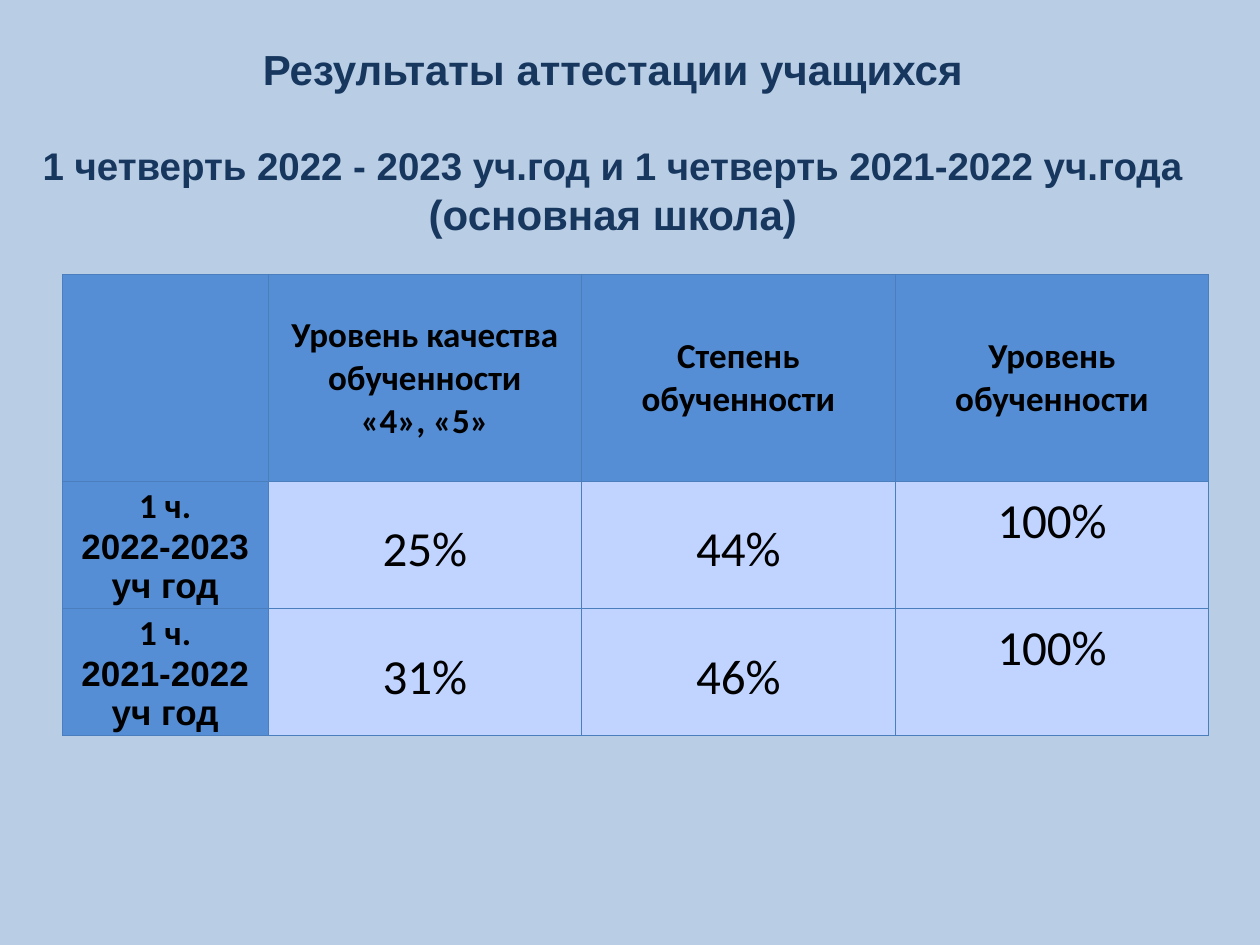
from dataclasses import dataclass

from lxml.etree import SubElement
from pptx import Presentation
from pptx.dml.color import RGBColor as Rgb
from pptx.enum.text import MSO_ANCHOR as Anchor, MSO_AUTO_SIZE as AutoSize, PP_ALIGN as Align
from pptx.oxml.ns import qn
from pptx.util import Pt

COLORS = {
    "background": "B9CDE5",
    "title": "17375E",
    "heading": "558ED5",
    "value": "C0D4FF",
    "border": "4B7EBC",
    "text": "000000",
}


@dataclass
class Line:
    text: str
    size: float
    font: str = "Arial"
    bold: bool = True
    color: str = "text"
    spacing: float = 1.0
    space_after: float = 0


@dataclass
class Period:
    years: str
    quality: str
    degree: str
    level: str


TITLE = [
    Line("Результаты аттестации учащихся", 24, color="title", space_after=28),
    Line("1 четверть 2022 - 2023 уч.год и 1 четверть 2021-2022 уч.года", 22, color="title"),
    Line("(основная школа)", 24, color="title"),
]
HEADINGS = [
    [],
    ["Уровень качества обученности", "«4», «5»"],
    ["Степень обученности"],
    ["Уровень обученности"],
]
PERIODS = [
    Period("2022-2023", "25%", "44%", "100%"),
    Period("2021-2022", "31%", "46%", "100%"),
]
COLUMN_WIDTHS = [117.6, 179.2, 179.2, 179.2]
ROW_HEIGHTS = [118.2, 71.2, 71.2]


def write_lines(frame, lines: list[Line]) -> None:
    for index, line in enumerate(lines):
        paragraph = frame.paragraphs[0] if index == 0 else frame.add_paragraph()
        paragraph.text = line.text
        paragraph.alignment = Align.CENTER
        paragraph.line_spacing = line.spacing
        paragraph.space_after = Pt(line.space_after)
        font = paragraph.font
        font.name, font.size, font.bold = line.font, Pt(line.size), line.bold
        font.color.rgb = Rgb.from_string(COLORS[line.color])


def add_borders(cell) -> None:
    properties = cell._tc.get_or_add_tcPr()
    for index, side in enumerate(("a:lnL", "a:lnR", "a:lnT", "a:lnB")):
        border = SubElement(properties, qn(side), w=str(Pt(0.75)))
        solid = SubElement(border, qn("a:solidFill"))
        SubElement(solid, qn("a:srgbClr"), val=COLORS["border"])
        properties.insert(index, border)


def fill_cell(cell, lines: list[Line], fill: str, anchor: Anchor = Anchor.MIDDLE) -> None:
    cell.fill.solid()
    cell.fill.fore_color.rgb = Rgb.from_string(COLORS[fill])
    cell.margin_left = cell.margin_right = cell.margin_top = Pt(0.72)
    cell.margin_bottom = Pt(0)
    cell.vertical_anchor = anchor
    write_lines(cell.text_frame, lines)
    add_borders(cell)


def add_title(slide) -> None:
    title = slide.shapes.title
    title.left, title.top, title.width, title.height = Pt(10), Pt(21), Pt(680.4), Pt(121)
    frame = title.text_frame
    frame.word_wrap = False
    frame.auto_size = AutoSize.SHAPE_TO_FIT_TEXT
    frame.vertical_anchor = Anchor.TOP
    write_lines(frame, TITLE)


def add_results(slide) -> None:
    table = slide.shapes.add_table(
        len(ROW_HEIGHTS), len(COLUMN_WIDTHS), Pt(35.6), Pt(156.8),
        Pt(sum(COLUMN_WIDTHS)), Pt(sum(ROW_HEIGHTS)),
    ).table
    for column, width in zip(table.columns, COLUMN_WIDTHS):
        column.width = Pt(width)
    for row, height in zip(table.rows, ROW_HEIGHTS):
        row.height = Pt(height)

    for column, heading in enumerate(HEADINGS):
        lines = [Line(text, 20, "Calibri") for text in heading]
        fill_cell(table.cell(0, column), lines, "heading")

    for row, period in enumerate(PERIODS, start=1):
        label = [Line("1 ч.", 20, "Calibri"), Line(f"{period.years} уч год", 20)]
        fill_cell(table.cell(row, 0), label, "heading")
        for column, value in enumerate((period.quality, period.degree, period.level), start=1):
            anchor = Anchor.TOP if value == period.level else Anchor.MIDDLE
            line = Line(value, 28, "Calibri", bold=False, spacing=1.15)
            fill_cell(table.cell(row, column), [line], "value", anchor)


def main() -> None:
    presentation = Presentation()
    presentation.slide_width, presentation.slide_height = Pt(720), Pt(540)
    slide = presentation.slides.add_slide(presentation.slide_layouts[5])
    slide.background.fill.solid()
    slide.background.fill.fore_color.rgb = Rgb.from_string(COLORS["background"])
    add_title(slide)
    add_results(slide)
    presentation.save("out.pptx")


if __name__ == "__main__":
    main()
